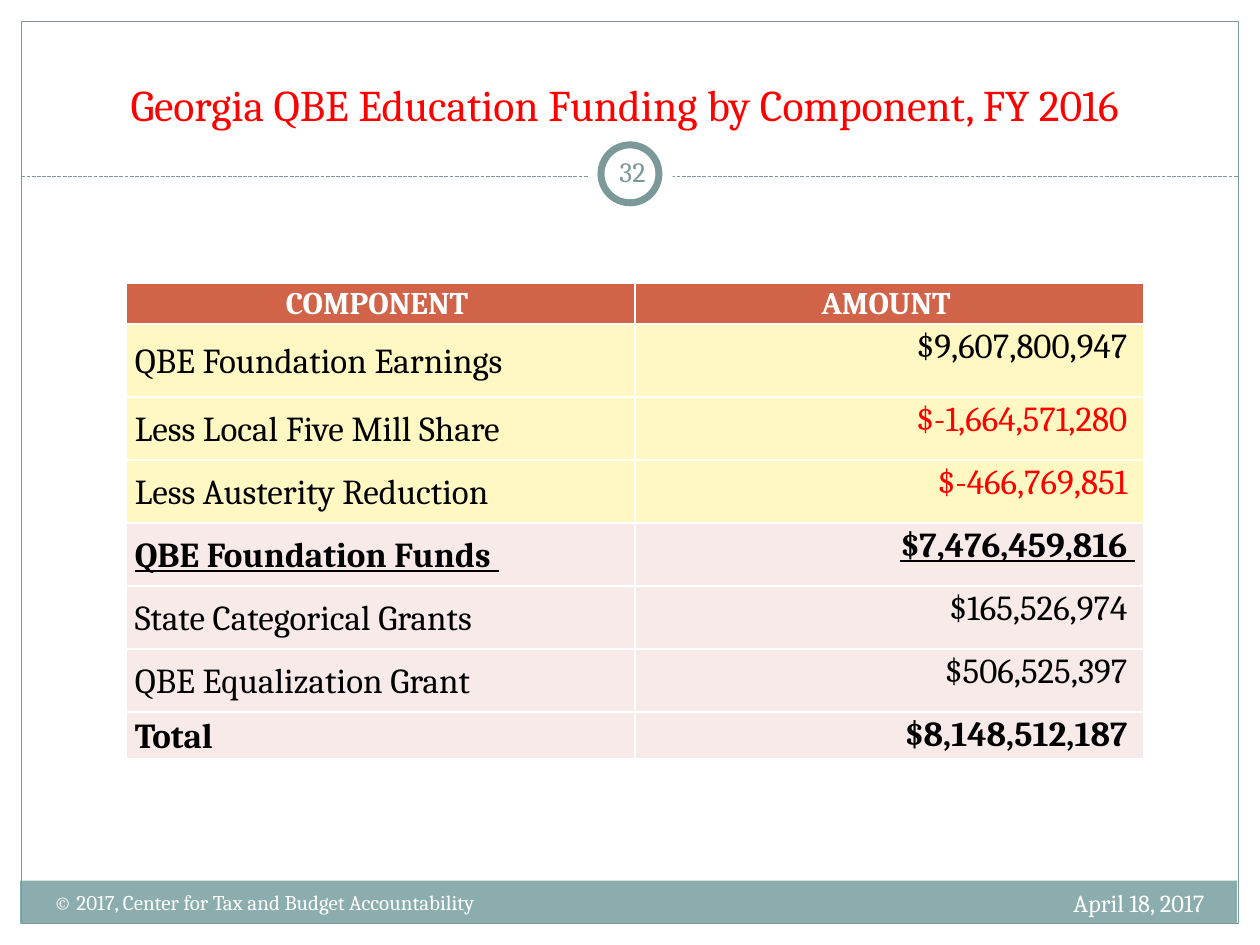
from dataclasses import dataclass
from typing import Optional

from lxml.etree import SubElement
from pptx import Presentation
from pptx.dml.color import RGBColor as Rgb
from pptx.enum.dml import MSO_LINE as Dash
from pptx.enum.shapes import MSO_CONNECTOR as Conn, MSO_SHAPE as Kind
from pptx.enum.text import MSO_ANCHOR as Anchor, PP_ALIGN as Align
from pptx.oxml import parse_xml
from pptx.oxml.ns import nsdecls, qn
from pptx.util import Pt

SCALE = 9144  # EMU in one px, 100 px to the inch


@dataclass(frozen=True)
class Theme:
    font: str = "Cambria"
    white: str = "FFFFFF"
    black: str = "000000"
    red: str = "FF0000"
    teal: str = "7C999A"
    band: str = "8CADAE"
    head: str = "D16349"
    cream: str = "FFF8C2"
    pink: str = "F7EAE9"
    title: int = 25
    body: int = 20
    label: int = 18
    page: int = 16
    date: int = 14
    foot: int = 12


T = Theme()


@dataclass(frozen=True)
class Box:
    left: int
    top: int
    width: int
    height: int

    def emu(self) -> tuple:
        return tuple(v * SCALE for v in (self.left, self.top, self.width, self.height))


@dataclass(frozen=True)
class Form:
    kind: Kind
    box: Box
    fill: Optional[str] = None
    line: Optional[str] = None
    weight: float = 0.75


@dataclass(frozen=True)
class Note:
    text: str
    box: Box
    size: int
    color: str
    align: Align = Align.LEFT
    anchor: Anchor = Anchor.TOP
    inset: tuple = (10, 5, 10, 5)


@dataclass(frozen=True)
class Row:
    name: str
    amount: str
    height: int
    fill: str
    color: str = T.black
    bold: bool = False
    under: bool = False


FORMS = [
    Form(Kind.RECTANGLE, Box(16, 699, 966, 34), fill=T.band),
    Form(Kind.RECTANGLE, Box(17, 17, 966, 716), line=T.teal),
]
RINGS = [
    Form(Kind.OVAL, Box(467, 105, 67, 67), fill=T.white),
    Form(Kind.OVAL, Box(477, 115, 46, 46), T.white, T.teal, 4),
]
NOTES = [
    Note("Georgia QBE Education Funding by Component, FY 2016 ", Box(33, 25, 933, 83),
         T.title, T.red, Align.CENTER, Anchor.BOTTOM),
    Note("April 18, 2017", Box(633, 700, 333, 40), T.date, T.white, Align.RIGHT),
    Note("32", Box(477, 112, 50, 48), T.page, T.teal, Align.CENTER, Anchor.MIDDLE, (5,) * 4),
    Note("© 2017, Center for Tax and Budget Accountability", Box(33, 701, 392, 40),
         T.foot, T.white),
]
ROWS = [
    Row("COMPONENT ", "AMOUNT ", 32, T.head, T.white, bold=True),
    Row("QBE Foundation Earnings", "$9,607,800,947 ", 58, T.cream),
    Row("Less Local Five Mill Share", "$-1,664,571,280 ", 50, T.cream),
    Row("Less Austerity Reduction", "$-466,769,851 ", 50, T.cream),
    Row("QBE Foundation Funds ", "$7,476,459,816 ", 50, T.pink, bold=True, under=True),
    Row("State Categorical Grants", "$165,526,974 ", 50, T.pink),
    Row("QBE Equalization Grant", "$506,525,397 ", 50, T.pink),
    Row("Total", "$8,148,512,187 ", 37, T.pink, bold=True),
]
GRID = Box(100, 225, 808, sum(row.height for row in ROWS))


def paint(fill, color: Optional[str]) -> None:
    if color:
        fill.solid()
        fill.fore_color.rgb = Rgb.from_string(color)
    else:
        fill.background()


def write(frame, text: str, align: Align, color: str, **style) -> None:
    """Put one styled paragraph into a text frame."""
    para = frame.paragraphs[0]
    para.alignment = align
    run = para.add_run()
    run.text = text
    run.font.color.rgb = Rgb.from_string(color)
    for key, value in {"name": T.font, **style}.items():
        setattr(run.font, key, value)


def inset(target, sides: tuple) -> None:
    for side, px in zip(("left", "top", "right", "bottom"), sides):
        setattr(target, f"margin_{side}", px * SCALE)


def draw_form(slide, form: Form) -> None:
    shape = slide.shapes.add_shape(form.kind, *form.box.emu())
    shape.shadow.inherit = False
    paint(shape.fill, form.fill)
    paint(shape.line.fill, form.line)
    if form.line:
        shape.line.width = Pt(form.weight)


def draw_rule(slide) -> None:
    ends = (v * SCALE for v in (17, 140, 983, 140))
    rule = slide.shapes.add_connector(Conn.STRAIGHT, *ends)
    paint(rule.line.fill, T.teal)
    rule.line.width = Pt(0.75)
    rule.line.dash_style = Dash.SQUARE_DOT
    SubElement(rule.element.spPr, qn("a:effectLst"))


def draw_note(slide, note: Note) -> None:
    frame = slide.shapes.add_textbox(*note.box.emu()).text_frame
    frame.word_wrap = True
    frame.vertical_anchor = note.anchor
    inset(frame, note.inset)
    write(frame, note.text, note.align, note.color, size=Pt(note.size))


def edge(cell) -> None:
    """Give a cell white borders, which must come before its fill."""
    props = cell._tc.get_or_add_tcPr()
    for i, side in enumerate("LRTB"):
        props.insert(i, parse_xml(
            f'<a:ln{side} {nsdecls("a")} w="{Pt(1)}"><a:solidFill>'
            f'<a:srgbClr val="{T.white}"/></a:solidFill></a:ln{side}>'))


def draw_table(slide) -> None:
    table = slide.shapes.add_table(len(ROWS), 2, *GRID.emu()).table
    for r, row in enumerate(ROWS):
        table.rows[r].height = row.height * SCALE
        head = r == 0
        for c, text in enumerate((row.name, row.amount)):
            cell = table.cell(r, c)
            inset(cell, (7, 0, 7, 0))
            paint(cell.fill, row.fill)
            edge(cell)
            cell.vertical_anchor = Anchor.TOP if head or c else Anchor.MIDDLE
            align = Align.CENTER if head else (Align.LEFT, Align.RIGHT)[c]
            color = T.red if "-" in text else row.color
            write(cell.text_frame, text, align, color, size=Pt(T.label if head else T.body),
                  bold=row.bold, underline=row.under)
            cell.text_frame.paragraphs[0].line_spacing = 1.07


def main() -> None:
    deck = Presentation()
    deck.slide_width, deck.slide_height = 1000 * SCALE, 750 * SCALE
    slide = deck.slides.add_slide(deck.slide_layouts[6])
    for form in FORMS:
        draw_form(slide, form)
    draw_rule(slide)
    for ring in RINGS:
        draw_form(slide, ring)
    for note in NOTES:
        draw_note(slide, note)
    draw_table(slide)
    deck.save("out.pptx")


if __name__ == "__main__":
    main()
